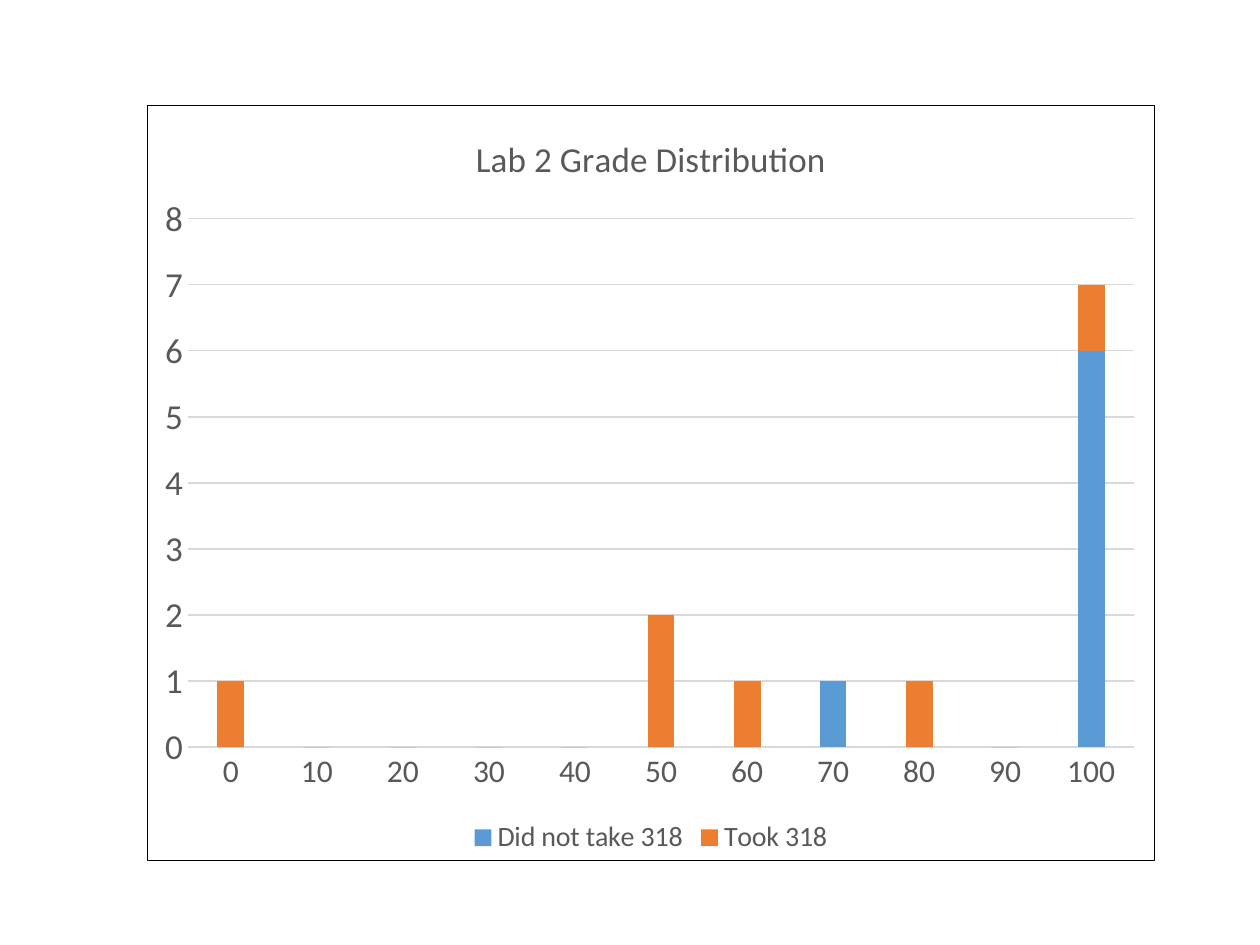
from dataclasses import dataclass

from lxml.etree import SubElement
from pptx import Presentation
from pptx.chart.data import CategoryChartData as ChartData
from pptx.dml.color import RGBColor
from pptx.enum.chart import XL_CHART_TYPE as ChartType
from pptx.enum.chart import XL_LEGEND_POSITION as LegendPosition
from pptx.enum.chart import XL_TICK_MARK as TickMark
from pptx.oxml import parse_xml
from pptx.oxml.ns import nsdecls, qn
from pptx.util import Emu, Pt

EMU_PER_PX = 914400 / 126


@dataclass(frozen=True)
class Theme:
    font: str = "Calibri"
    text: str = "595959"
    rule: str = "D9D9D9"
    border: str = "000000"
    series: tuple = ("5B9BD5", "ED7D31")
    title_size: int = 20
    count_size: int = 20
    grade_size: int = 18
    legend_size: int = 16
    line_width: float = 0.75


def px(length):
    return Emu(round(length * EMU_PER_PX))


def style_font(font, *, name, size, color, bold=False):
    font.name = name
    font.size = Pt(size)
    font.bold = bold
    font.color.rgb = RGBColor.from_string(color)


def write_text(frame, text, **style):
    run = frame.paragraphs[0].add_run()
    run.text = text
    style_font(run.font, **style)


class SlideBuilder:
    def __init__(self, deck, theme):
        self.theme = theme
        self.slide = deck.slides.add_slide(deck.slide_layouts[6])

    def text_style(self, size):
        return {"name": self.theme.font, "size": size, "color": self.theme.text}

    def rule(self, line):
        line.color.rgb = RGBColor.from_string(self.theme.rule)
        line.width = Pt(self.theme.line_width)

    def axis(self, axis, size):
        axis.major_tick_mark = axis.minor_tick_mark = TickMark.NONE
        style_font(axis.tick_labels.font, **self.text_style(size))

    def border(self, chart):
        width = Pt(self.theme.line_width)
        frame = parse_xml(
            f'<c:spPr {nsdecls("c", "a")}><a:solidFill><a:srgbClr val="FFFFFF"/></a:solidFill>'
            f'<a:ln w="{width}"><a:solidFill><a:srgbClr val="{self.theme.border}"/>'
            "</a:solidFill></a:ln></c:spPr>"
        )
        chart.element.find(qn("c:txPr")).addprevious(frame)

    def plot_layout(self, chart, **fractions):
        area = chart.element.find(".//" + qn("c:plotArea"))
        layout = area.find(qn("c:layout"))
        if layout is None:
            layout = parse_xml(f'<c:layout {nsdecls("c")}/>')
            area.insert(0, layout)
        manual = SubElement(layout, qn("c:manualLayout"))
        settings = {"layoutTarget": "inner", "xMode": "edge", "yMode": "edge", **fractions}
        for tag, value in settings.items():
            SubElement(manual, qn(f"c:{tag}")).set("val", str(value))

    def stacked_columns(self, title, categories, counts, left, top, width, height):
        theme = self.theme
        data = ChartData()
        data.categories = categories
        for name, values in counts.items():
            data.add_series(name, values)
        chart = self.slide.shapes.add_chart(
            ChartType.COLUMN_STACKED, px(left), px(top), px(width), px(height), data
        ).chart
        style_font(chart.font, **self.text_style(10))

        chart.has_title = True
        write_text(chart.chart_title.text_frame, title, **self.text_style(theme.title_size))
        chart.chart_title.include_in_layout = False
        chart.has_legend = True
        chart.legend.position = LegendPosition.BOTTOM
        chart.legend.include_in_layout = False
        style_font(chart.legend.font, **self.text_style(theme.legend_size))

        self.axis(chart.category_axis, theme.grade_size)
        self.rule(chart.category_axis.format.line)
        count_axis = chart.value_axis
        self.axis(count_axis, theme.count_size)
        count_axis.format.line.fill.background()
        count_axis.minimum_scale, count_axis.maximum_scale = 0, 8
        count_axis.major_unit = 1
        self.rule(count_axis.major_gridlines.format.line)

        plot = chart.plots[0]
        plot.gap_width, plot.overlap = 219, 100
        plot.vary_by_categories = False
        for series, color in zip(plot.series, theme.series):
            series.format.fill.solid()
            series.format.fill.fore_color.rgb = RGBColor.from_string(color)
        self.border(chart)
        self.plot_layout(chart, x=0.04, y=0.15, w=0.94, h=0.7)


def main():
    deck = Presentation()
    deck.slide_width, deck.slide_height = px(1260), px(945)
    builder = SlideBuilder(deck, Theme())
    builder.stacked_columns(
        "Lab 2 Grade Distribution",
        [str(grade) for grade in range(0, 101, 10)],
        {
            "Did not take 318": (0, 0, 0, 0, 0, 0, 0, 1, 0, 0, 6),
            "Took 318": (1, 0, 0, 0, 0, 2, 1, 0, 1, 0, 1),
        },
        left=147, top=105, width=1008, height=756,
    )
    deck.save("out.pptx")


if __name__ == "__main__":
    main()
